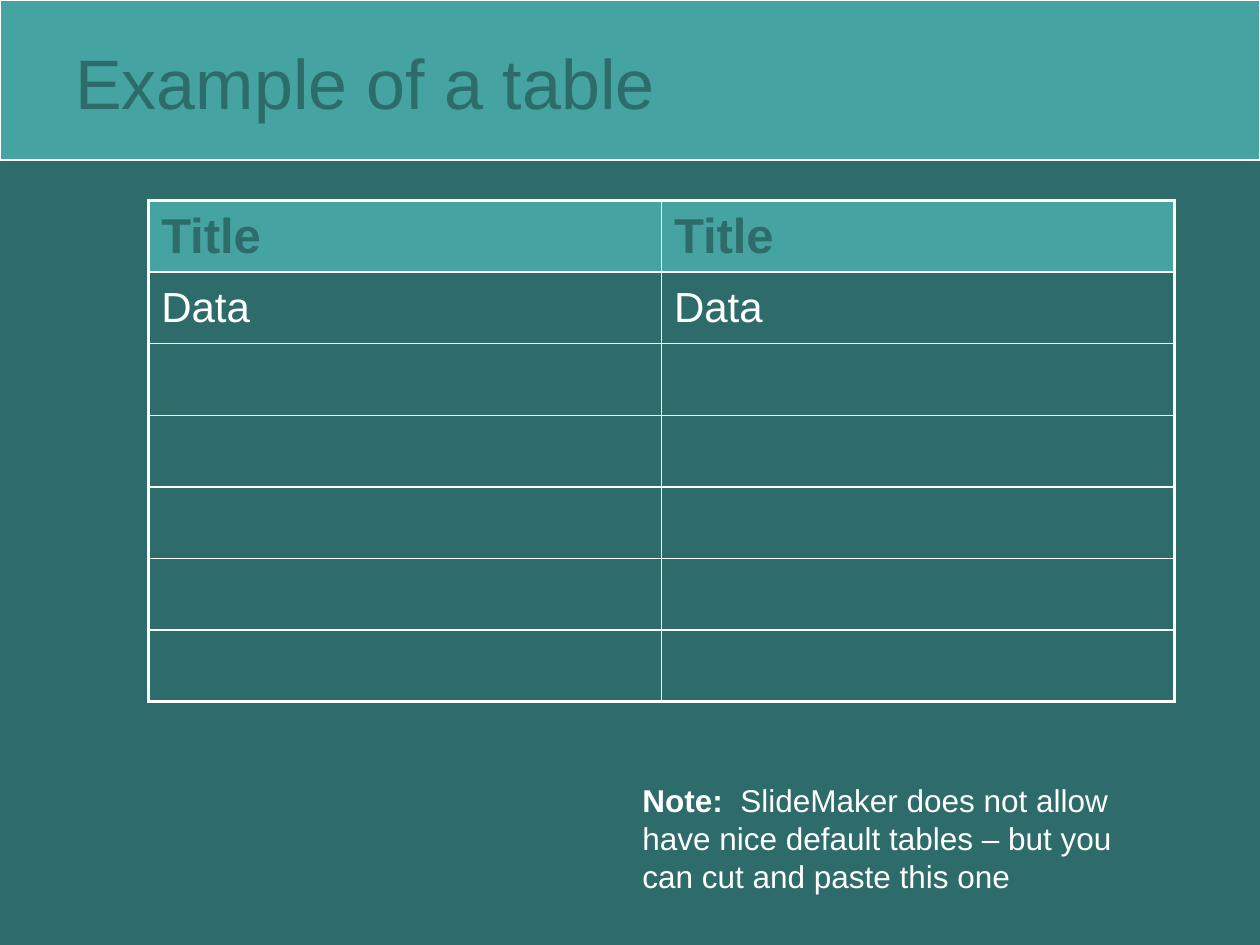
import lxml.etree
import pptx
import pptx.dml.color
import pptx.enum.shapes
import pptx.enum.text
import pptx.oxml.ns
import pptx.util

DEEP_TEAL = pptx.dml.color.RGBColor(0x2E, 0x6B, 0x6B)
LIGHT_TEAL = pptx.dml.color.RGBColor(0x45, 0xA3, 0xA1)
WHITE = pptx.dml.color.RGBColor(0xFF, 0xFF, 0xFF)
MIDDLE = pptx.enum.text.MSO_ANCHOR.MIDDLE
TOP = pptx.enum.text.MSO_ANCHOR.TOP


class TealSlide:
    """Draws teal-themed elements placed on a grid of 100 columns by 75 rows."""

    font = "Arial"
    thin, thick = 1, 2.25

    def __init__(self, deck):
        self.column = deck.slide_width / 100
        self.row = deck.slide_height / 75
        self.slide = deck.slides.add_slide(deck.slide_layouts[6])
        self.slide.background.fill.solid()
        self.slide.background.fill.fore_color.rgb = DEEP_TEAL

    def place(self, left, top, width, height):
        return (round(left * self.column), round(top * self.row),
                round(width * self.column), round(height * self.row))

    def add_words(self, paragraph, words, size, color, bold=False):
        run = paragraph.add_run()
        run.text = words
        run.font.name = self.font
        run.font.size = pptx.util.Pt(size)
        run.font.bold = bold
        run.font.color.rgb = color

    def band(self, *area):
        band = self.slide.shapes.add_shape(
            pptx.enum.shapes.MSO_SHAPE.RECTANGLE, *self.place(*area))
        band.shadow.inherit = False
        band.fill.solid()
        band.fill.fore_color.rgb = LIGHT_TEAL
        band.line.color.rgb = WHITE
        band.line.width = pptx.util.Pt(0.75)

    def text(self, area, runs, anchor=TOP):
        frame = self.slide.shapes.add_textbox(*self.place(*area)).text_frame
        frame.word_wrap = True
        frame.vertical_anchor = anchor
        for run in runs:
            self.add_words(frame.paragraphs[0], *run)

    def border(self, cell, side, width):
        properties = cell._tc.get_or_add_tcPr()
        line = lxml.etree.SubElement(
            properties, pptx.oxml.ns.qn(f"a:ln{side}"), w=str(pptx.util.Pt(width)))
        fill = lxml.etree.SubElement(line, pptx.oxml.ns.qn("a:solidFill"))
        lxml.etree.SubElement(fill, pptx.oxml.ns.qn("a:srgbClr"), val=str(WHITE))

    def table(self, area, headings, records, row_count):
        column_count = len(headings)
        table = self.slide.shapes.add_table(
            row_count, column_count, *self.place(*area)).table
        table.first_row = table.horz_banding = False
        contents = [headings] + records
        for r in range(row_count):
            for c in range(column_count):
                cell = table.cell(r, c)
                cell.vertical_anchor = MIDDLE
                edges = {"L": c == 0, "R": c == column_count - 1,
                         "T": r == 0, "B": r == row_count - 1}
                for side, outer in edges.items():
                    self.border(cell, side, self.thick if outer else self.thin)
                if r == 0:
                    cell.fill.solid()
                    cell.fill.fore_color.rgb = LIGHT_TEAL
                else:
                    cell.fill.background()
                if r < len(contents):
                    style = (28, DEEP_TEAL, True) if r == 0 else (24, WHITE)
                    self.add_words(cell.text_frame.paragraphs[0], contents[r][c], *style)


def main():
    deck = pptx.Presentation()
    deck.slide_width = pptx.util.Inches(10)
    deck.slide_height = pptx.util.Inches(7.5)
    page = TealSlide(deck)
    page.band(0, 0, 100, 12.7)
    page.text((5, 2.1, 88.7, 8.7), [("Example of a table", 40, DEEP_TEAL)], MIDDLE)
    page.table((11.8, 15.9, 81.4, 39.8), ["Title", "Title"], [["Data", "Data"]], 7)
    page.text((50, 61.5, 42.1, 10), [
        ("Note:  ", 18, WHITE, True),
        ("SlideMaker does not allow have nice default tables – "
         "but you can cut and paste this one", 18, WHITE),
    ])
    deck.save("out.pptx")


if __name__ == "__main__":
    main()
